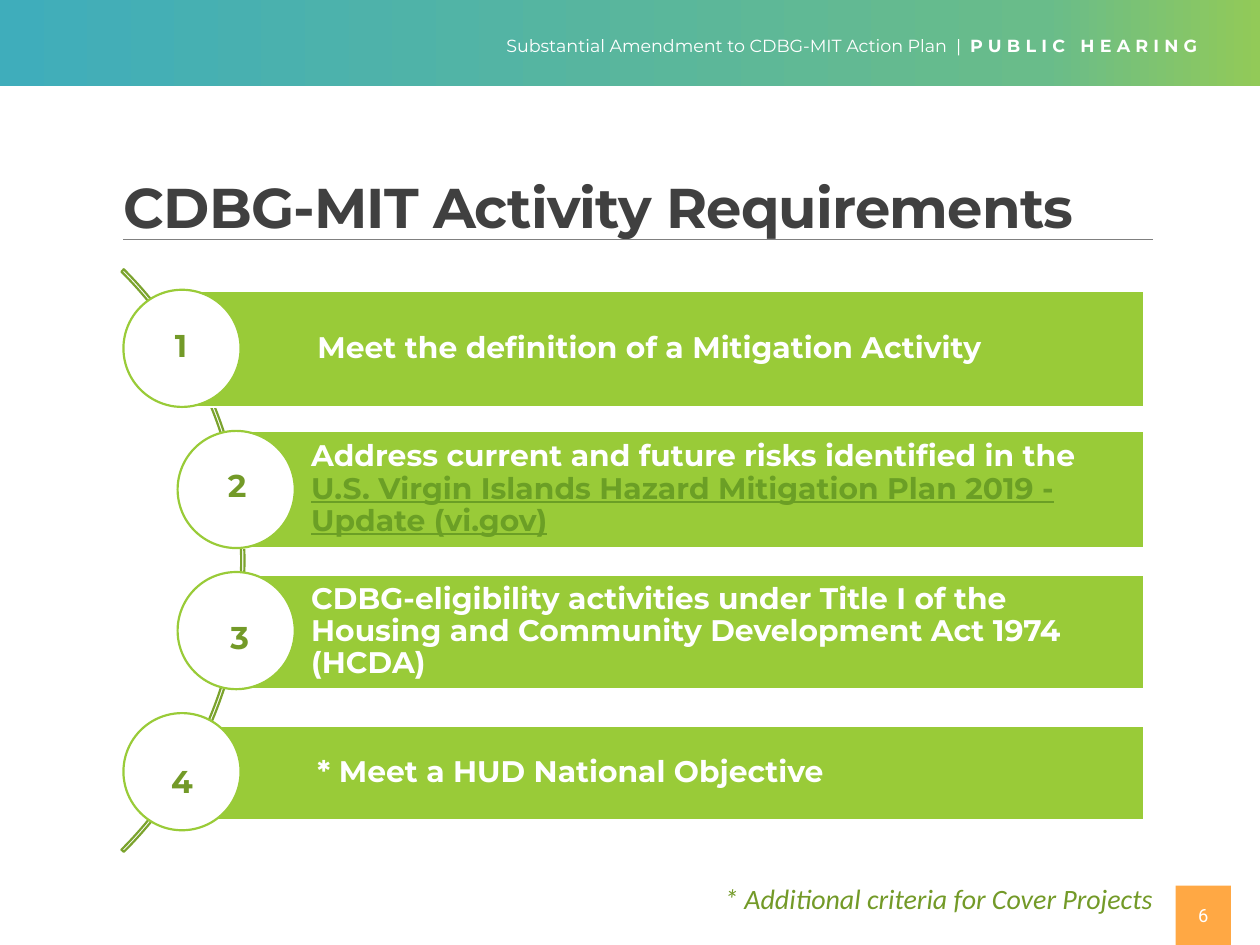
from lxml import etree
from pptx import Presentation
from pptx import util as u
from pptx.dml.color import RGBColor
from pptx.enum import shapes, text
from pptx.oxml.ns import qn

Inches, Pt = u.Inches, u.Pt
GREEN, DARK_GREEN, WHITE = "99CB38", "739A28", "FFFFFF"


def rgb(value):
    return RGBColor.from_string(value)


def style(font, size, color, name="Montserrat", bold=False, italic=False):
    font.size, font.name, font.bold, font.italic = Pt(size), name, bold, italic
    font.color.rgb = rgb(color)


prs = Presentation()
prs.slide_width, prs.slide_height = Inches(10), Inches(7.5)
slide = prs.slides.add_slide(prs.slide_layouts[5])
items = slide.shapes

# Header band
band = items.add_shape(shapes.MSO_SHAPE.RECTANGLE, 0, 0, Inches(10), Inches(0.68))
band.shadow.inherit = False
band.line.fill.background()
band.fill.gradient()
band.fill.gradient_angle = 0
stop_list = band.fill._fill._gradFill.find(qn("a:gsLst"))
for stop in list(stop_list):
    stop_list.remove(stop)
for percent, color in [(0, "3FADBB"), (83, "69BC8A"), (100, "92CA58")]:
    stop = etree.SubElement(stop_list, qn("a:gs"), pos=str(percent * 1000))
    etree.SubElement(stop, qn("a:srgbClr"), val=color)

header = items.add_textbox(Inches(3.92), Inches(0.23), Inches(5.99), Inches(0.27))
header.text_frame.word_wrap = True
line = header.text_frame.paragraphs[0]
plan = line.add_run()
plan.text = "Substantial Amendment to CDBG-MIT Action Plan  |  "
style(plan.font, 10, WHITE)
hearing = line.add_run()
hearing.text = "PUBLIC HEARING"
style(hearing.font, 10, WHITE, bold=True)
hearing.font._element.set("spc", "300")

# Title and its rule
title = items.title
title.left, title.top, title.width, title.height = (
    Inches(0.88), Inches(1.24), Inches(8.25), Inches(0.75))
title.text_frame.text = "CDBG-MIT Activity Requirements"
title.text_frame.auto_size = text.MSO_AUTO_SIZE.NONE
title.text_frame.vertical_anchor = text.MSO_ANCHOR.MIDDLE
heading = title.text_frame.paragraphs[0]
heading.alignment = text.PP_ALIGN.LEFT
heading.line_spacing = 1.07
style(heading.font, 32, "404040", bold=True)
heading.runs[0].font._element.set("spc", "-50")

rule = items.add_connector(
    shapes.MSO_CONNECTOR.STRAIGHT, Inches(0.98), Inches(1.9), Inches(9.15), Inches(1.9))
rule.line.color.rgb = rgb("808080")
rule.line.width = Pt(0.5)
etree.SubElement(rule._element.spPr, qn("a:effectLst"))

# Requirements strung along an arc
arc = items.add_shape(
    shapes.MSO_SHAPE.BLOCK_ARC, Inches(-4.6), Inches(1.18), Inches(6.54), Inches(6.54))
arc.adjustments[0], arc.adjustments[1], arc.adjustments[2] = 189, 27, 0.004
arc.shadow.inherit = False
arc.fill.background()
arc.line.color.rgb = rgb("7BA32D")
arc.line.width = Pt(1.25)

BAR_RIGHT, CIRCLE = 9.08, 0.93
# bar left, top, height, text inset; circle top; number left, top; (wording, is link)
requirements = [
    (1.45, 2.31, 0.92, 1.07, 2.3, 1.29, 2.54,
     [("Meet the definition of a Mitigation Activity", False)]),
    (1.88, 3.42, 0.93, 0.59, 3.42, 1.71, 3.65,
     [("Address current and future risks identified in the ", False),
      ("U.S. Virgin Islands Hazard Mitigation Plan 2019 - Update (vi.gov)", True)]),
    (1.88, 4.56, 0.91, 0.59, 4.54, 1.73, 4.86,
     [("CDBG-eligibility activities under Title I of the Housing and Community "
       "Development Act 1974 (HCDA)", False)]),
    (1.45, 5.76, 0.75, 1.07, 5.66, 1.26, 6.0,
     [("* Meet a HUD National Objective", False)]),
]
for number, requirement in enumerate(requirements, 1):
    left, top, height, inset, circle_top, number_left, number_top, wording = requirement
    bar = items.add_shape(
        shapes.MSO_SHAPE.RECTANGLE,
        Inches(left), Inches(top), Inches(BAR_RIGHT - left), Inches(height))
    circle = items.add_shape(
        shapes.MSO_SHAPE.OVAL,
        Inches(left - 0.47), Inches(circle_top), Inches(CIRCLE), Inches(CIRCLE))
    for shape, fill, outline in [(bar, GREEN, WHITE), (circle, WHITE, GREEN)]:
        shape.shadow.inherit = False
        shape.fill.solid()
        shape.fill.fore_color.rgb = rgb(fill)
        shape.line.color.rgb = rgb(outline)
        shape.line.width = Pt(1.25)

    frame = bar.text_frame
    frame.word_wrap = True
    frame.vertical_anchor = text.MSO_ANCHOR.MIDDLE
    frame.margin_left = Inches(inset)
    frame.margin_top = frame.margin_right = frame.margin_bottom = Inches(0.05)
    sentence = frame.paragraphs[0]
    sentence.alignment = text.PP_ALIGN.LEFT
    sentence.line_spacing = 0.9
    for words, is_link in wording:
        run = sentence.add_run()
        run.text = words
        style(run.font, 17, "6B9F25" if is_link else WHITE, bold=True)
        run.font.underline = is_link

    digit = items.add_textbox(
        Inches(number_left), Inches(number_top), Inches(0.35), Inches(0.4))
    digit.text_frame.word_wrap = False
    digit.text_frame.text = str(number)
    style(digit.text_frame.paragraphs[0].font, 18, DARK_GREEN, bold=True)

# Footnote and page number
footnote = items.add_textbox(Inches(5.65), Inches(6.95), Inches(4.11), Inches(0.37))
footnote.text_frame.word_wrap = True
footnote.text_frame.text = "* Additional criteria for Cover Projects"
style(footnote.text_frame.paragraphs[0].font, 16, DARK_GREEN, "Calibri", italic=True)

page = items.add_shape(
    shapes.MSO_SHAPE.RECTANGLE, Inches(9.33), Inches(7.03), Inches(0.44), Inches(0.47))
page.shadow.inherit = False
page.fill.solid()
page.fill.fore_color.rgb = rgb("FFA844")
page.line.fill.background()
page.text_frame.text = "6"
page.text_frame.vertical_anchor = text.MSO_ANCHOR.MIDDLE
page.text_frame.paragraphs[0].alignment = text.PP_ALIGN.CENTER
style(page.text_frame.paragraphs[0].font, 10.5, WHITE, "Roboto")

prs.save("out.pptx")
